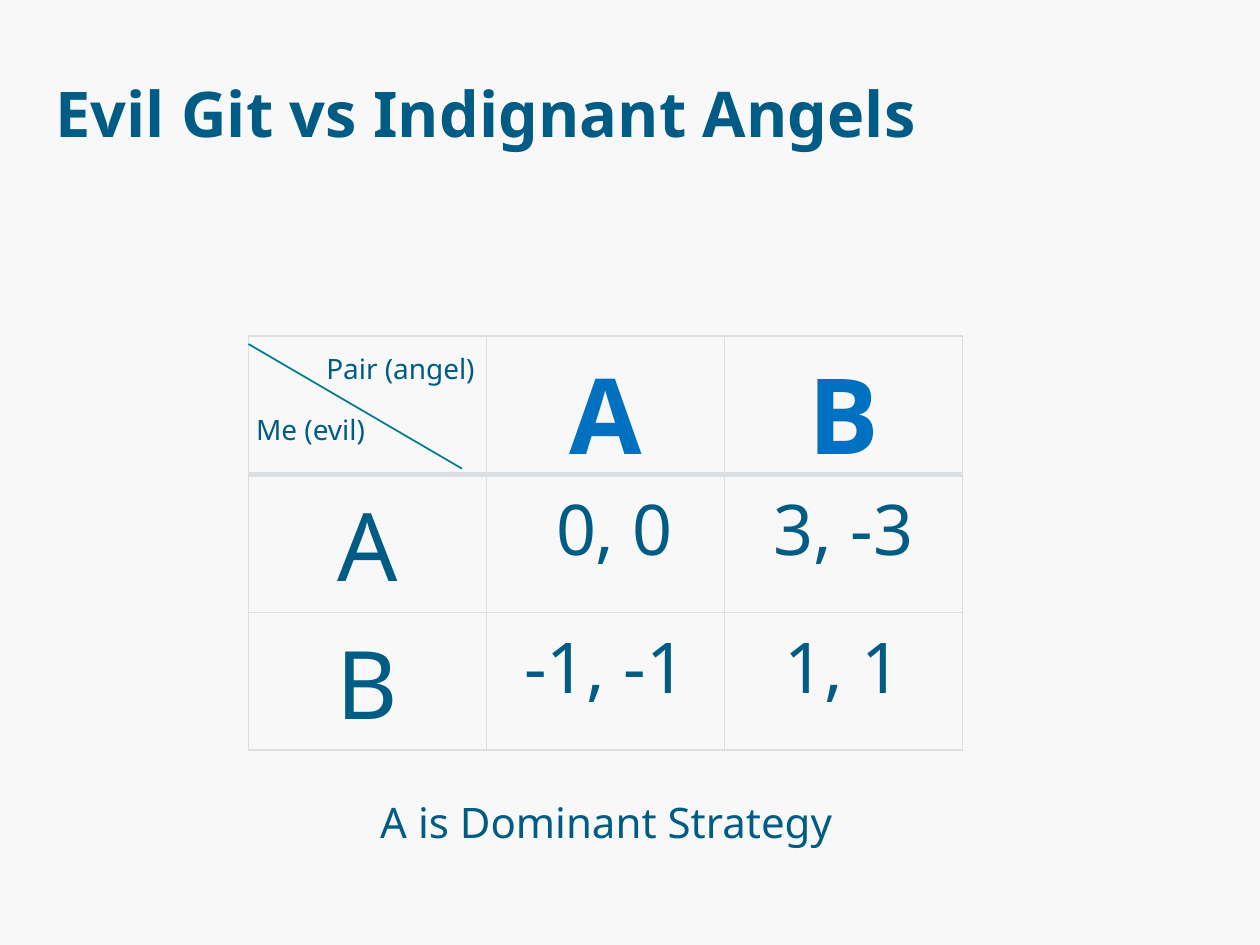
"""Build a slide with the payoff table of an evil player against an angel."""
from dataclasses import dataclass

from lxml.etree import SubElement
from pptx import Presentation
from pptx.dml.color import RGBColor
from pptx.enum.shapes import MSO_CONNECTOR
from pptx.enum.text import MSO_ANCHOR, MSO_AUTO_SIZE, PP_ALIGN
from pptx.oxml.ns import qn
from pptx.util import Pt


@dataclass(frozen=True)
class Theme:
    font: str = "Noto Sans"
    background: str = "F8F8F8"
    text: str = "005C84"
    accent: str = "0070C0"
    border: str = "DBDFE1"
    diagonal: str = "007C92"
    title_size: int = 36
    header_size: int = 60
    row_label_size: int = 54
    payoff_size: int = 40
    player_size: int = 16
    conclusion_size: int = 24


theme = Theme()


def write_text(text_frame, text, size, color=theme.text, bold=False, alignment=PP_ALIGN.CENTER):
    text_frame.text = text
    paragraph = text_frame.paragraphs[0]
    paragraph.alignment = alignment
    for run in paragraph.runs:
        run.font.name = theme.font
        run.font.size = Pt(size)
        run.font.bold = bold
        run.font.color.rgb = RGBColor.from_string(color)


def add_border(cell, side, width):
    properties = cell._tc.get_or_add_tcPr()
    line = SubElement(properties, qn(f"a:ln{side}"), w=str(Pt(width)))
    fill = SubElement(line, qn("a:solidFill"))
    SubElement(fill, qn("a:srgbClr"), val=theme.border)


presentation = Presentation()
presentation.slide_width = Pt(720)
presentation.slide_height = Pt(540)
slide = presentation.slides.add_slide(presentation.slide_layouts[6])
slide.background.fill.solid()
slide.background.fill.fore_color.rgb = RGBColor.from_string(theme.background)

title = slide.shapes.add_textbox(Pt(31.7), Pt(31.7), Pt(640), Pt(133))
title_frame = title.text_frame
title_frame.word_wrap = True
title_frame.vertical_anchor = MSO_ANCHOR.TOP
title_frame.margin_left = title_frame.margin_right = title_frame.margin_bottom = 0
title_frame.margin_top = Pt(11)
write_text(title_frame, "Evil Git vs Indignant Angels", theme.title_size, bold=True, alignment=PP_ALIGN.LEFT)

payoffs = [
    ["", "A", "B"],
    ["A", " 0, 0", "3, -3"],
    ["B", "-1, -1", "1, 1"],
]
table = slide.shapes.add_table(3, 3, Pt(142), Pt(192), Pt(408), Pt(236)).table
table.first_row = False
table.horz_banding = False
for row_index, row in enumerate(payoffs):
    for column_index, text in enumerate(row):
        cell = table.cell(row_index, column_index)
        if row_index == 0:
            style = (theme.header_size, theme.accent, True)
        elif column_index == 0:
            style = (theme.row_label_size,)
        else:
            style = (theme.payoff_size,)
        write_text(cell.text_frame, text, *style)
        add_border(cell, "L", 1)
        add_border(cell, "R", 1)
        add_border(cell, "T", 3 if row_index == 1 else 1)
        add_border(cell, "B", 3 if row_index == 0 else 1)
        cell.fill.background()

diagonal = slide.shapes.add_connector(MSO_CONNECTOR.STRAIGHT, Pt(142), Pt(196.6), Pt(264), Pt(267.8))
diagonal.line.color.rgb = RGBColor.from_string(theme.diagonal)
diagonal.line.width = Pt(1)
SubElement(diagonal._element.spPr, qn("a:effectLst"))

labels = [
    ("Pair (angel)", 177.8, 197.3, 102.2, 26.6, theme.player_size),
    ("Me (evil)", 137.5, 232.3, 79.9, 26.6, theme.player_size),
    ("A is Dominant Strategy", 203.8, 451.5, 285.1, 36, theme.conclusion_size),
]
for text, left, top, width, height, size in labels:
    label = slide.shapes.add_textbox(Pt(left), Pt(top), Pt(width), Pt(height))
    label.text_frame.word_wrap = False
    label.text_frame.auto_size = MSO_AUTO_SIZE.SHAPE_TO_FIT_TEXT
    write_text(label.text_frame, text, size)

presentation.save("out.pptx")
